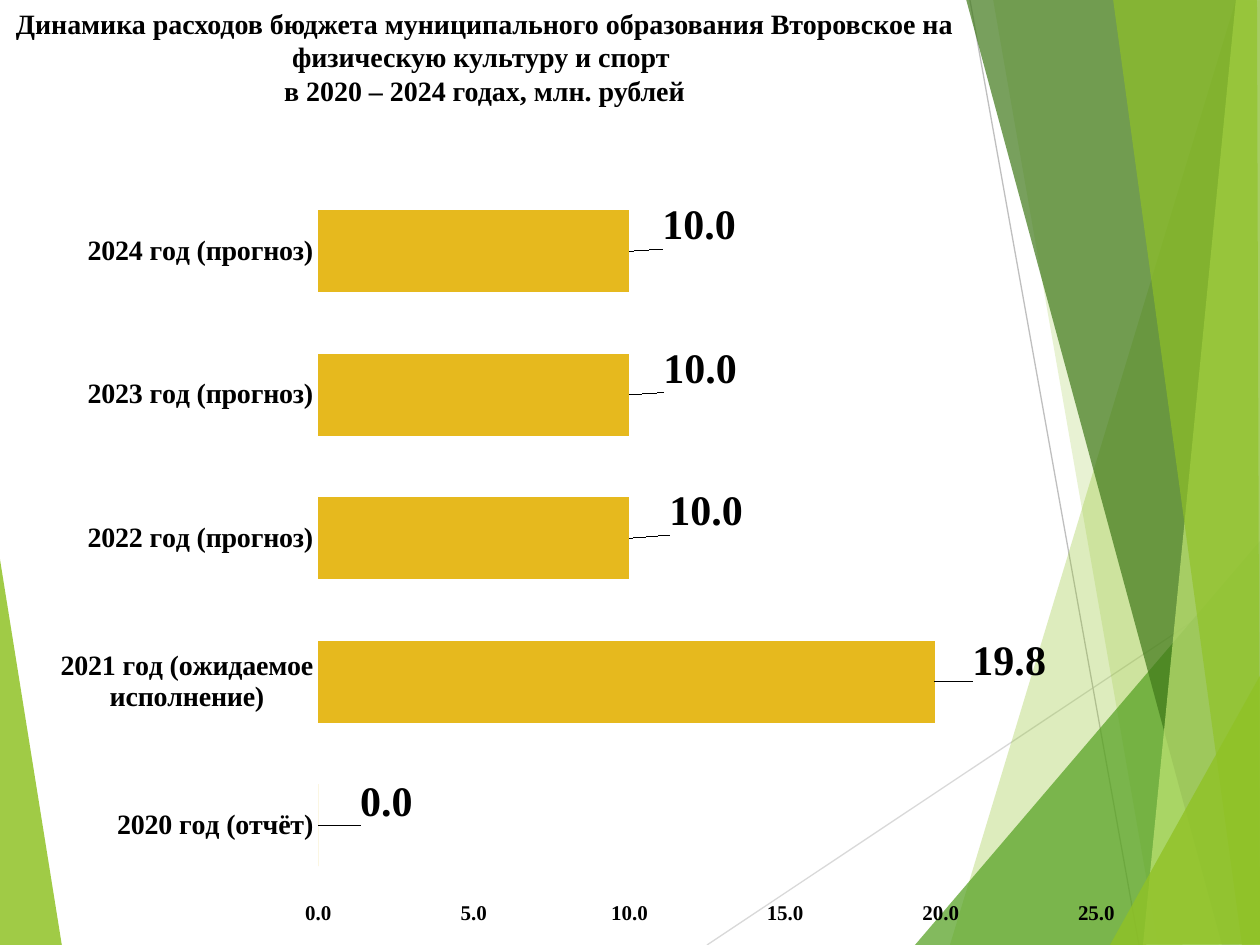
from lxml.etree import SubElement
from pptx import Presentation
from pptx.chart.data import CategoryChartData
from pptx.dml.color import RGBColor
from pptx.enum.chart import XL_CHART_TYPE as ChartType, XL_LABEL_POSITION as LabelPos
from pptx.enum.chart import XL_TICK_MARK as TickMark
from pptx.enum.shapes import MSO_CONNECTOR as Connector
from pptx.enum.text import MSO_ANCHOR as Anchor, MSO_AUTO_SIZE as AutoSize, PP_ALIGN as Align
from pptx.oxml import parse_xml
from pptx.oxml.ns import nsdecls, qn
from pptx.util import Emu, Pt

SCALE = 914400 / 126  # EMU in one px
PAGE = (0, 0, 1260, 945)
SERIF = "Times New Roman"
COLORS = {
    "black": "000000", "bar": "E6B91E", "lime": "90C226", "green": "54A021",
    "dark": "3F7819", "pale": "C0E474", "line": "D9D9D9", "line_dark": "BFBFBF",
}

# Backdrop, back to front: colour, opacity in percent, corners
LEFT_FACET = ("lime", 85, [(-1, 553), (62, 946), (-1, 945)])
RIGHT_FACETS = [
    ("lime", 30, [(1236, 0), (950, 945), (1262, 946), (1261, 1)]),
    ("lime", 20, [(993, -1), (1158, 945), (1261, 945), (1261, -1)]),
    ("green", 72, [(915, 945), (1260, 541), (1261, 945)]),
    ("dark", 70, [(966, -1), (1222, 945), (1261, 944), (1261, -1)]),
    ("pale", 70, [(1236, -1), (1143, 945), (1261, 945), (1260, -1)]),
    ("lime", 65, [(1113, -1), (1242, 945), (1260, 945), (1257, -1)]),
    ("lime", 80, [(1110, 945), (1261, 674), (1261, 944)]),
]
RAYS = [("line", 707, 945, 1261, 576), ("line_dark", 970, 0, 1139, 945)]

TITLE = ("Динамика расходов бюджета муниципального образования Второвское на "
         "физическую культуру и спорт \vв 2020 – 2024 годах, млн. рублей")
# Category, value, shift of the value label in px
SPENDING = [
    ("2020 год (отчёт)", 0, (37, -23)),
    ("2021 год (ожидаемое исполнение)", 19.8, (33, -21)),
    ("2022 год (прогноз)", 10, (35, -27)),
    ("2023 год (прогноз)", 10, (29, -26)),
    ("2024 год (прогноз)", 10, (28, -26)),
]


def px(value):
    return Emu(round(value * SCALE))


def color(name):
    return RGBColor.from_string(COLORS[name])


def style_font(font, size, name=SERIF, bold=True, fill="black"):
    font.name, font.size, font.bold = name, Pt(size), bold
    font.color.rgb = color(fill)


def write_text(para, text, align=Align.CENTER, **style):
    para.text = text
    para.alignment = align
    for span in para.runs:
        style_font(span.font, **style)


def add_facet(page, box, fill, opacity, corners):
    points = [(box[0] + x, box[1] + y) for x, y in corners]
    builder = page.shapes.build_freeform(*points[0], scale=SCALE)
    builder.add_line_segments(points[1:], close=True)
    facet = builder.convert_to_shape()
    facet.shadow.inherit = False
    facet.fill.solid()
    facet.fill.fore_color.rgb = color(fill)
    facet.line.fill.background()
    tint = facet._element.spPr.find(qn("a:solidFill"))[0]
    SubElement(tint, qn("a:alpha")).set("val", str(opacity * 1000))


def add_ray(page, box, stroke, x1, y1, x2, y2):
    left, top = box[:2]
    ray = page.shapes.add_connector(Connector.STRAIGHT, px(left + x1), px(top + y1),
                                    px(left + x2), px(top + y2))
    ray.line.color.rgb = color(stroke)
    ray.line.width = Pt(0.75)
    SubElement(ray._element.spPr, qn("a:effectLst"))


def add_backdrop(page, box):
    add_facet(page, box, *LEFT_FACET)
    for ray in RAYS:
        add_ray(page, box, *ray)
    for facet in RIGHT_FACETS:
        add_facet(page, box, *facet)


def place_title(page, box):
    title = page.shapes.title
    title.left, title.top, title.width, title.height = map(px, box)
    frame = title.text_frame
    frame.word_wrap = True
    frame.auto_size = AutoSize.NONE
    frame.vertical_anchor = Anchor.TOP
    write_text(frame.paragraphs[0], TITLE, size=16)
    page.shapes._spTree.append(title._element)  # in front of the backdrop


def layout_xml(**values):
    parts = "".join(f'<c:{key} val="{value}"/>' for key, value in values.items())
    return parse_xml(f'<c:layout {nsdecls("c")}><c:manualLayout>{parts}'
                     '</c:manualLayout></c:layout>')


def style_axis(axis, size):
    axis.has_major_gridlines = False
    axis.major_tick_mark = axis.minor_tick_mark = TickMark.NONE
    axis.format.line.fill.background()
    style_font(axis.tick_labels.font, size)


def add_spending_chart(page, box):
    data = CategoryChartData(number_format="0.0")
    data.categories = [row[0] for row in SPENDING]
    data.add_series("Series 1", [row[1] for row in SPENDING])
    chart = page.shapes.add_chart(ChartType.BAR_CLUSTERED, *map(px, box), data).chart
    chart.has_legend = chart.has_title = False
    style_font(chart.font, 10, name="Karla", bold=False)

    # Axes
    style_axis(chart.category_axis, 16)
    style_axis(chart.value_axis, 12)
    chart.value_axis.minimum_scale, chart.value_axis.maximum_scale = 0, 25
    chart.value_axis.major_unit = 5
    chart.value_axis.tick_labels.number_format = "0.0"
    chart.value_axis.tick_labels.number_format_is_linked = False

    # Bars
    plot = chart.plots[0]
    plot.gap_width = 75
    plot.vary_by_categories = False
    series = plot.series[0]
    series.format.fill.solid()
    series.format.fill.fore_color.rgb = color("bar")

    # Value labels, each shifted from the end of its bar
    labels = series.data_labels
    labels.show_value = True
    labels.number_format, labels.number_format_is_linked = "0.0", False
    style_font(labels.font, 24)
    for index, (_, _, shift) in enumerate(SPENDING):
        label = series.points[index].data_label
        style_font(label.font, 24)
        label.position = LabelPos.OUTSIDE_END
        mark = series._element.xpath(f".//c:dLbl/c:idx[@val='{index}']")[0]
        mark.addnext(layout_xml(x=round(shift[0] / box[2], 4), y=round(shift[1] / box[3], 4)))

    # Plot area
    area = chart._chartSpace.chart.plotArea
    for old in area.findall(qn("c:layout")):
        area.remove(old)
    area.insert(0, layout_xml(layoutTarget="inner", xMode="edge", yMode="edge",
                              x=0.265, y=0.025, w=0.648, h=0.914))


def main():
    deck = Presentation()
    deck.slide_width, deck.slide_height = px(PAGE[2]), px(PAGE[3])
    page = deck.slides.add_slide(deck.slide_layouts[5])
    add_backdrop(page, PAGE)
    place_title(page, (0, 0, 969, 137))
    add_spending_chart(page, (0, 160, 1201, 785))
    deck.save("out.pptx")


if __name__ == "__main__":
    main()
